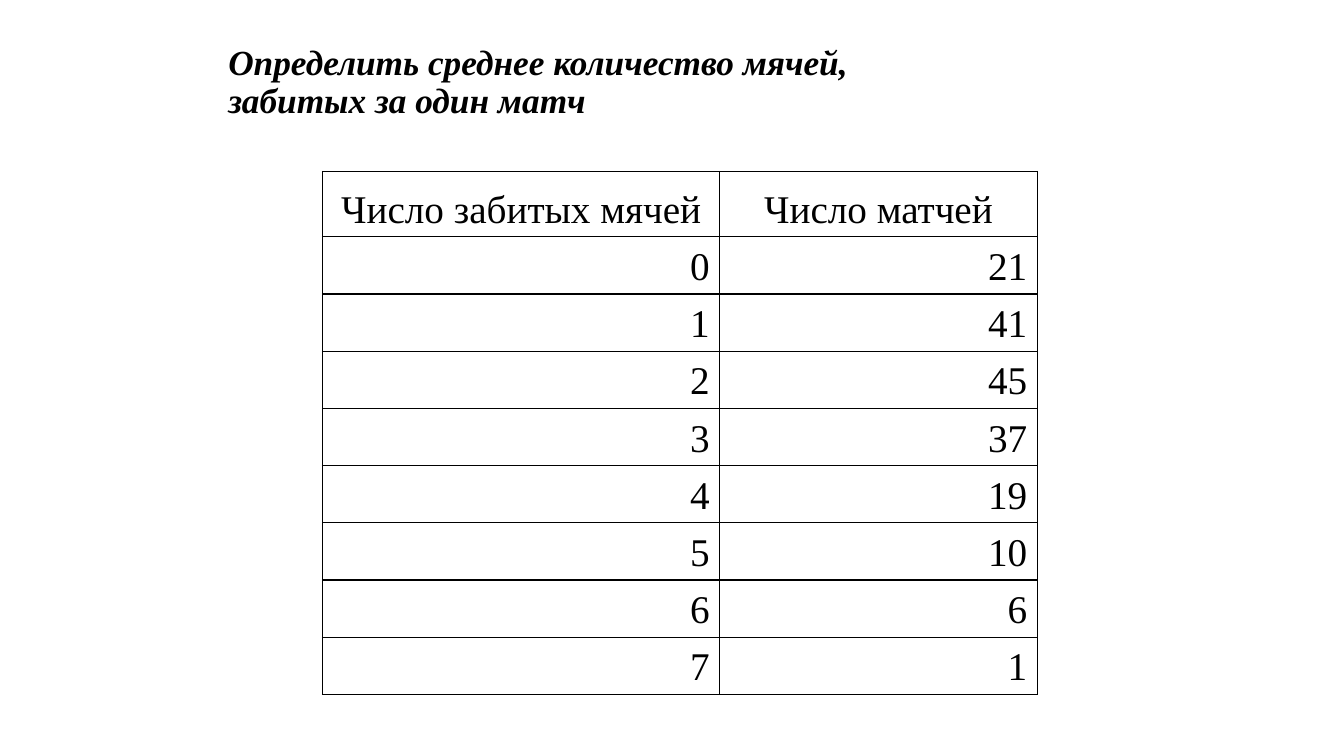
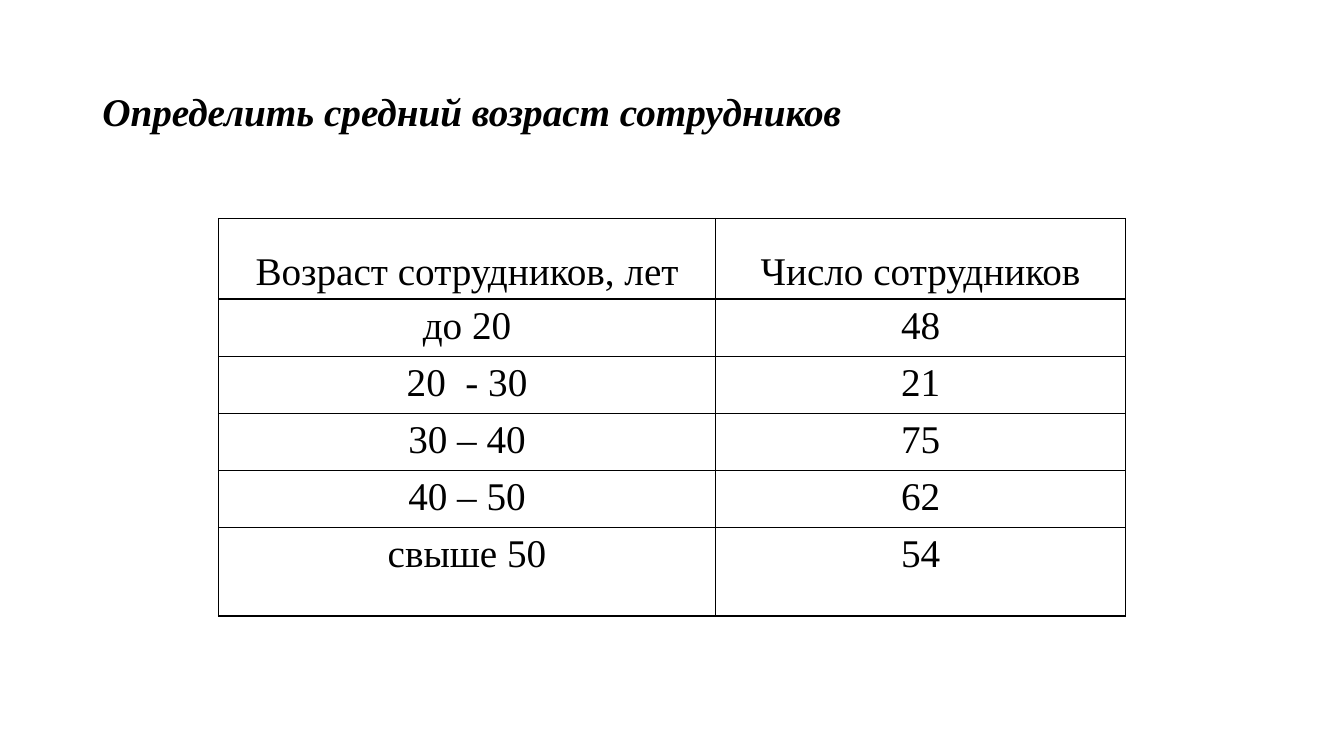
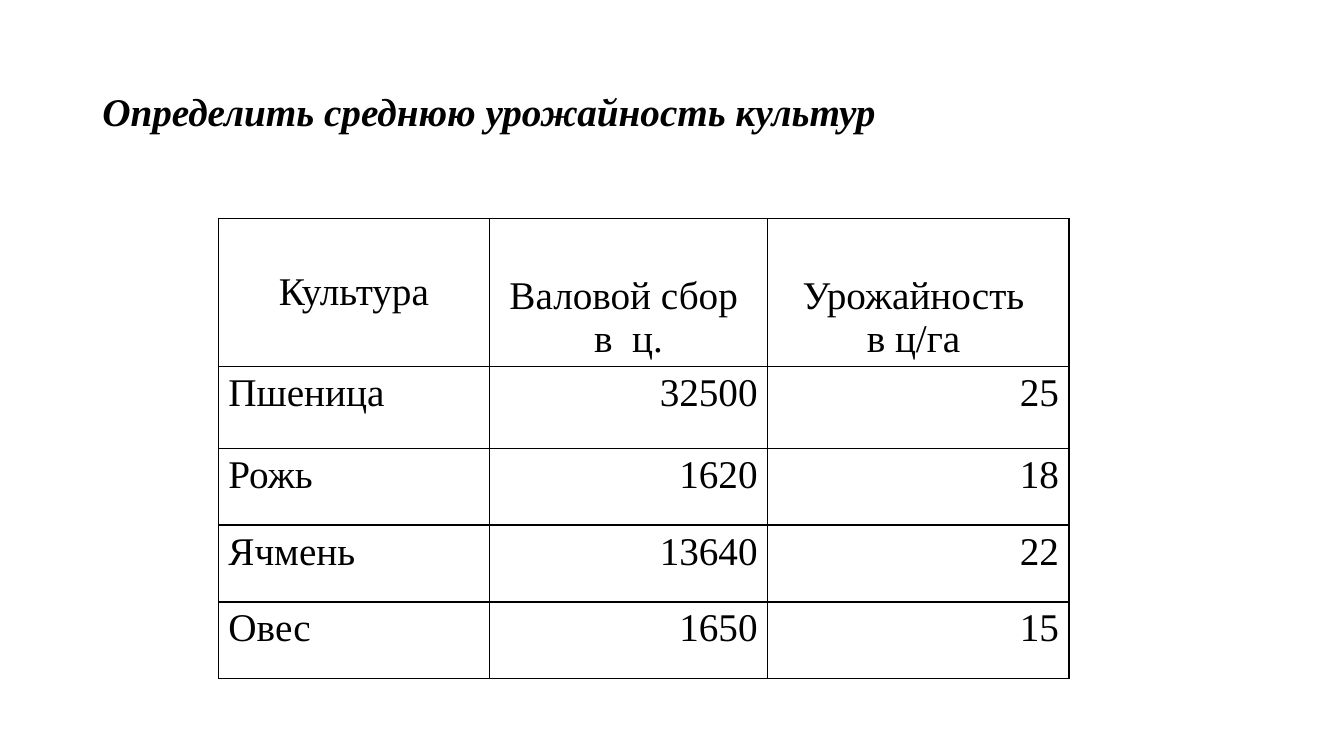
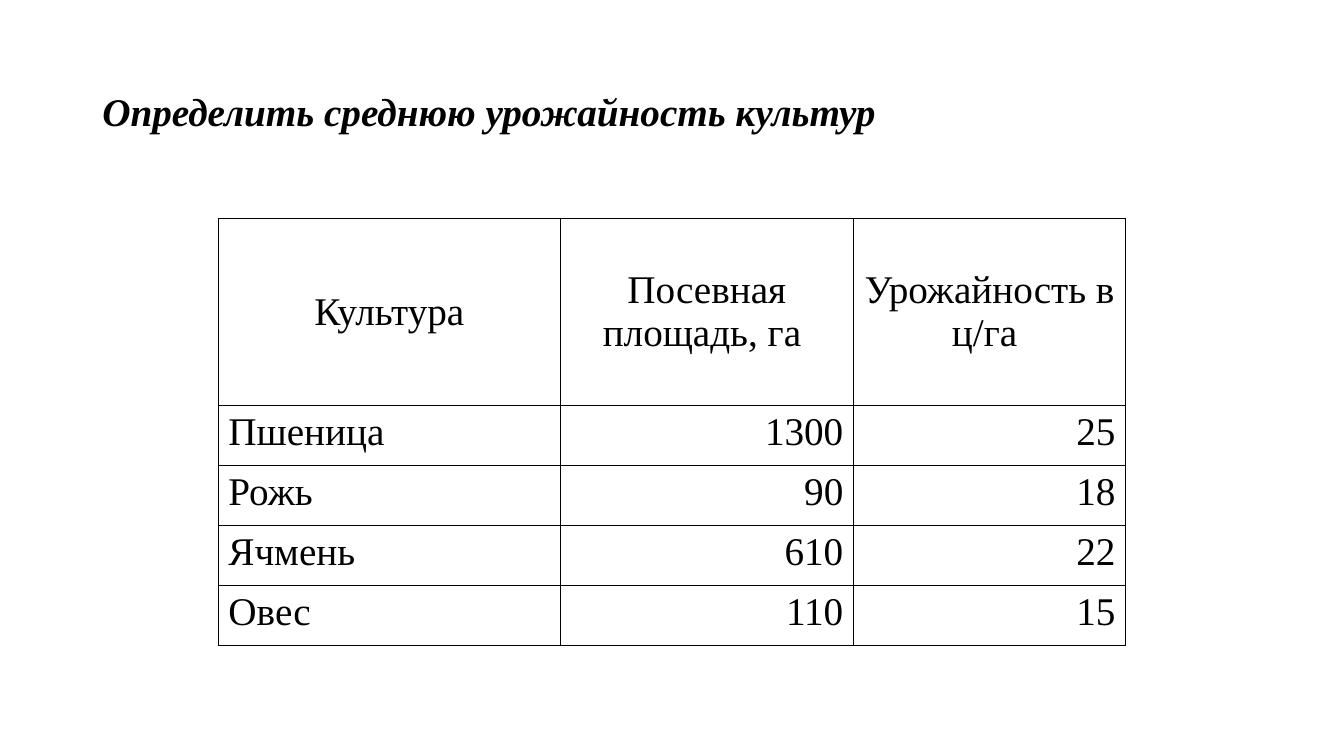
from lxml import etree
from pptx import Presentation
from pptx.dml.color import RGBColor
from pptx.enum.text import MSO_ANCHOR, PP_ALIGN
from pptx.oxml.ns import qn
from pptx.util import Inches, Pt

COLS, ROWS = 80, 45
UNIT = Inches(1) / 6
FONT, INK = "Times New Roman", "000000"
SIDE = {"l": PP_ALIGN.LEFT, "c": PP_ALIGN.CENTER, "r": PP_ALIGN.RIGHT}
HOLD = {"t": MSO_ANCHOR.TOP, "m": MSO_ANCHOR.MIDDLE, "b": MSO_ANCHOR.BOTTOM}
EDGES = ("a:lnL", "a:lnR", "a:lnT", "a:lnB")


def grid(*cells):
    return [round(cell * UNIT) for cell in cells]


def color(code):
    return RGBColor.from_string(code)


def write(frame, text, size=28, side="l", bold=False, slant=False, lead=None):
    frame.word_wrap = True
    frame.text = text
    for para in frame.paragraphs:
        para.alignment = SIDE[side]
        para.line_spacing = lead
        for run in para.runs:
            font = run.font
            font.name, font.size = FONT, Pt(size)
            font.bold, font.italic = bold, slant
            font.color.rgb = color(INK)


def frame_cell(cell):
    props = cell._tc.get_or_add_tcPr()
    for edge in EDGES:
        line = etree.SubElement(props, qn(edge), w=str(Pt(1)))
        fill = etree.SubElement(line, qn("a:solidFill"))
        etree.SubElement(fill, qn("a:srgbClr"), val=INK)
    cell.fill.background()


class Deck:
    def __init__(self):
        self.file = Presentation()
        self.file.slide_width, self.file.slide_height = grid(COLS, ROWS)
        self.slide = None

    def page(self):
        self.slide = self.file.slides.add_slide(self.file.slide_layouts[6])

    def title(self, text, box=(5.5, 2.4, 69, 8.7), size=28):
        frame = self.slide.shapes.add_textbox(*grid(*box)).text_frame
        write(frame, text, size=size, bold=True, slant=True, lead=0.9)
        frame.vertical_anchor = HOLD["m"]

    def table(self, data, wide, high, sides, heads, body="t", spot=(13, 13)):
        box = grid(*spot, sum(wide), sum(high))
        table = self.slide.shapes.add_table(len(high), len(wide), *box).table
        table.first_row = table.horz_banding = False
        for col, width in zip(table.columns, grid(*wide)):
            col.width = width
        for row, height in zip(table.rows, grid(*high)):
            row.height = height
        for r, line in enumerate(data):
            for c, text in enumerate(line):
                cell = table.cell(r, c)
                frame_cell(cell)
                write(cell.text_frame, text, side=sides[c] if r else "c")
                cell.vertical_anchor = HOLD[body if r else heads[c]]


def main():
    deck = Deck()

    deck.page()
    deck.title("Определить среднее количество мячей, \vзабитых за один матч",
               box=(13, 3, 54, 3.9), size=25.2)
    games = ["21", "41", "45", "37", "19", "10", "6", "1"]
    goals = [(str(n), count) for n, count in enumerate(games)]
    deck.table([("Число забитых мячей", "Число матчей"), *goals],
               wide=[23.64, 18.9], high=[3.9] + [3.4] * 8,
               sides="rr", heads="bb", body="b", spot=(19.2, 10.2))

    deck.page()
    deck.title("Определить средний возраст сотрудников")
    deck.table([("Возраст сотрудников, лет", "Число сотрудников"),
                ("до 20", "48"),
                ("20  - 30", "21"),
                ("30 – 40", "75"),
                ("40 – 50", "62"),
                ("свыше 50", "54")],
               wide=[29.6, 24.4], high=[4.8] + [3.4] * 4 + [5.25],
               sides="cc", heads="bb")

    crops = ["Пшеница", "Рожь", "Ячмень", "Овес"]
    yields = ["25", "18", "22", "15"]
    fields = [
        (("Культура", "Валовой сбор \nв  ц.", "Урожайность \nв ц/га "),
         ["32500", "1620", "13640", "1650"],
         [16.13, 16.57, 17.94], [8.8, 4.88] + [4.58] * 3, "mbb"),
        (("Культура", "Посевная площадь, га ", "Урожайность в ц/га "),
         ["1300", "90", "610", "110"],
         [20.35, 17.45, 16.2], [11.13] + [3.58] * 4, "mmm"),
    ]
    for head, sums, wide, high, heads in fields:
        deck.page()
        deck.title("Определить среднюю урожайность культур")
        deck.table([head, *zip(crops, sums, yields)], wide=wide, high=high,
                   sides="lrr", heads=heads)

    deck.file.save("out.pptx")


if __name__ == "__main__":
    main()
